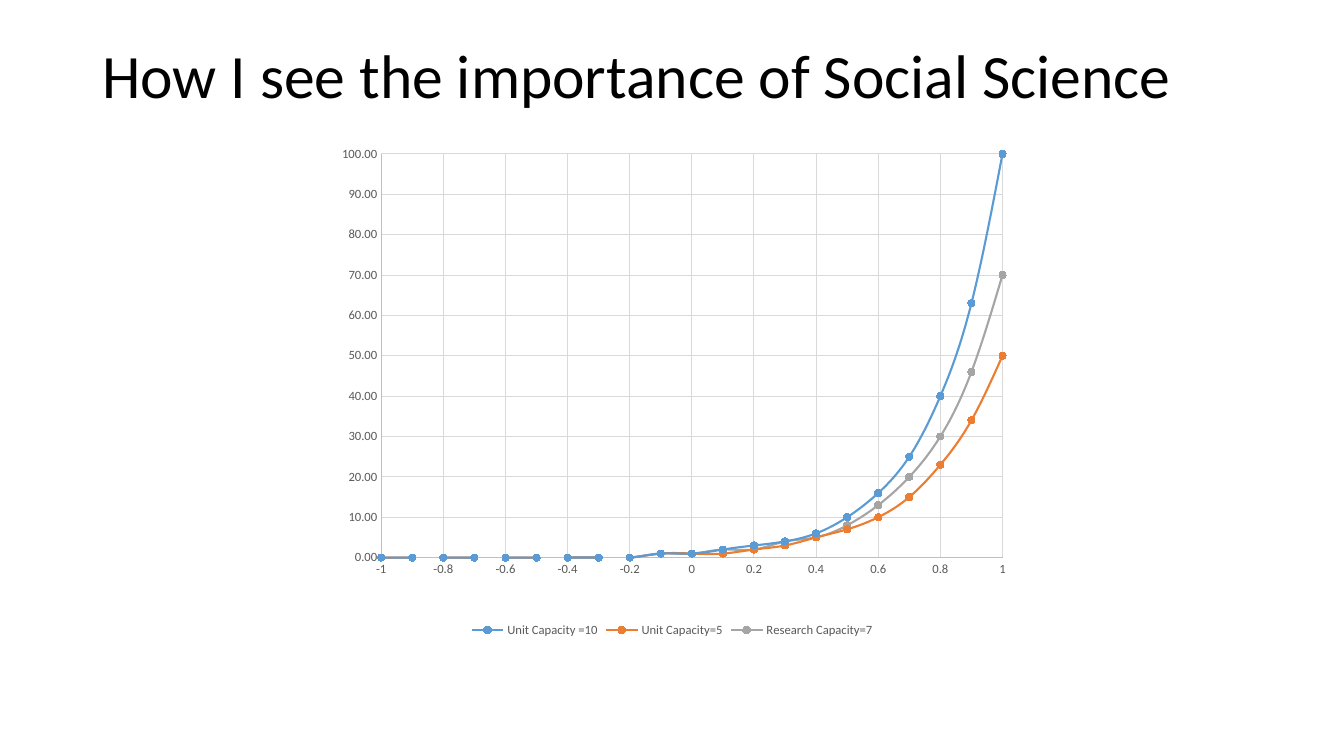
from lxml import etree
from pptx import Presentation
from pptx.chart.data import XyChartData
from pptx.dml.color import RGBColor
from pptx.enum.chart import (XL_AXIS_CROSSES, XL_CHART_TYPE, XL_LEGEND_POSITION,
                             XL_MARKER_STYLE, XL_TICK_MARK)
from pptx.enum.text import MSO_ANCHOR
from pptx.oxml.ns import qn
from pptx.util import Pt

SMOOTH_SCATTER = XL_CHART_TYPE.XY_SCATTER_SMOOTH
AXIS_MINIMUM = XL_AXIS_CROSSES.MINIMUM
LEGEND_BOTTOM = XL_LEGEND_POSITION.BOTTOM
CIRCLE = XL_MARKER_STYLE.CIRCLE
NO_TICKS = XL_TICK_MARK.NONE
ANCHOR_TOP = MSO_ANCHOR.TOP

FONT = "Calibri"
COLORS = {
    "text": "000000",
    "label": "595959",
    "axis": "BFBFBF",
    "grid": "D9D9D9",
    "blue": "5B9BD5",
    "orange": "ED7D31",
    "gray": "A5A5A5",
}
CAPACITIES = [
    ("Unit Capacity =10", 100, "blue"),
    ("Unit Capacity=5", 50, "orange"),
    ("Research Capacity=7", 70, "gray"),
]
PLOT_AREA = {"x": 0.135, "y": 0.074, "w": 0.78, "h": 0.767}


def rgb(name):
    """Return the named colour."""
    return RGBColor.from_string(COLORS[name])


def style_font(font, size, color):
    """Set typeface, size and colour of a font."""
    font.name = FONT
    font.size = Pt(size)
    font.color.rgb = rgb(color)


def style_line(line, width, color):
    """Set width and colour of a line."""
    line.width = Pt(width)
    line.color.rgb = rgb(color)


def style_axis(axis, low, high, step, number_format):
    """Scale an axis and give it labels, line and gridlines."""
    axis.minimum_scale, axis.maximum_scale, axis.major_unit = low, high, step
    axis.major_tick_mark = axis.minor_tick_mark = NO_TICKS
    axis.has_major_gridlines = True
    style_line(axis.major_gridlines.format.line, 0.75, "grid")
    style_line(axis.format.line, 0.75, "axis")
    style_font(axis.tick_labels.font, 9, "label")
    axis.tick_labels.number_format = number_format
    axis.tick_labels.number_format_is_linked = False


def smooth_curves(chart):
    """Draw every scatter line as a smooth curve."""
    for smooth in chart.element.iter(qn("c:smooth")):
        smooth.set("val", "1")


def fix_plot_area(chart):
    """Place the inner plot area at fixed fractions of the chart."""
    plot_area = chart.element.find(".//" + qn("c:plotArea"))
    for automatic in plot_area.findall(qn("c:layout")):
        plot_area.remove(automatic)
    layout = etree.Element(qn("c:layout"))
    manual = etree.SubElement(layout, qn("c:manualLayout"))
    settings = [("layoutTarget", "inner"), ("xMode", "edge"), ("yMode", "edge")]
    for tag, value in settings + list(PLOT_AREA.items()):
        etree.SubElement(manual, qn("c:" + tag)).set("val", str(value))
    plot_area.insert(0, layout)


def add_title(slide, left, top, width, height):
    """Add the slide title in the given box."""
    title = slide.shapes.add_textbox(Pt(left), Pt(top), Pt(width), Pt(height))
    frame = title.text_frame
    frame.word_wrap = True
    frame.vertical_anchor = ANCHOR_TOP
    frame.text = "How I see the importance of Social Science"
    heading = frame.paragraphs[0]
    heading.line_spacing = 0.9
    style_font(heading.runs[0].font, 44, "text")


def add_capacity_chart(slide, left, top, width, height):
    """Add the exponential capacity curves in the given box."""
    data = XyChartData()
    for name, peak, _ in CAPACITIES:
        curve = data.add_series(name)
        for tenth in range(-10, 11):
            x = tenth / 10
            curve.add_data_point(x, round(peak ** x))
    chart = slide.shapes.add_chart(SMOOTH_SCATTER, Pt(left), Pt(top),
                                   Pt(width), Pt(height), data).chart
    style_font(chart.font, 10, "text")
    chart.has_title = False
    chart.plots[0].vary_by_categories = False
    style_axis(chart.category_axis, -1, 1, 0.2, "General")
    style_axis(chart.value_axis, 0, 100, 10, "0.00")
    chart.category_axis.crosses = AXIS_MINIMUM

    for curve, (_, _, color) in zip(chart.plots[0].series, CAPACITIES):
        style_line(curve.format.line, 1.5, color)
        curve.marker.style = CIRCLE
        curve.marker.size = 5
        curve.marker.format.fill.solid()
        curve.marker.format.fill.fore_color.rgb = rgb(color)
        style_line(curve.marker.format.line, 0.75, color)
    smooth_curves(chart)

    chart.has_legend = True
    chart.legend.position = LEGEND_BOTTOM
    chart.legend.include_in_layout = False
    style_font(chart.legend.font, 9, "label")
    fix_plot_area(chart)


def main():
    """Build and save the slide."""
    deck = Presentation()
    deck.slide_width, deck.slide_height = Pt(960), Pt(540)
    slide = deck.slides.add_slide(deck.slide_layouts[6])
    add_title(slide, 66, 28.75, 828, 104.4)
    add_capacity_chart(slide, 195.5, 82.2, 569, 376)
    deck.save("out.pptx")


if __name__ == "__main__":
    main()
